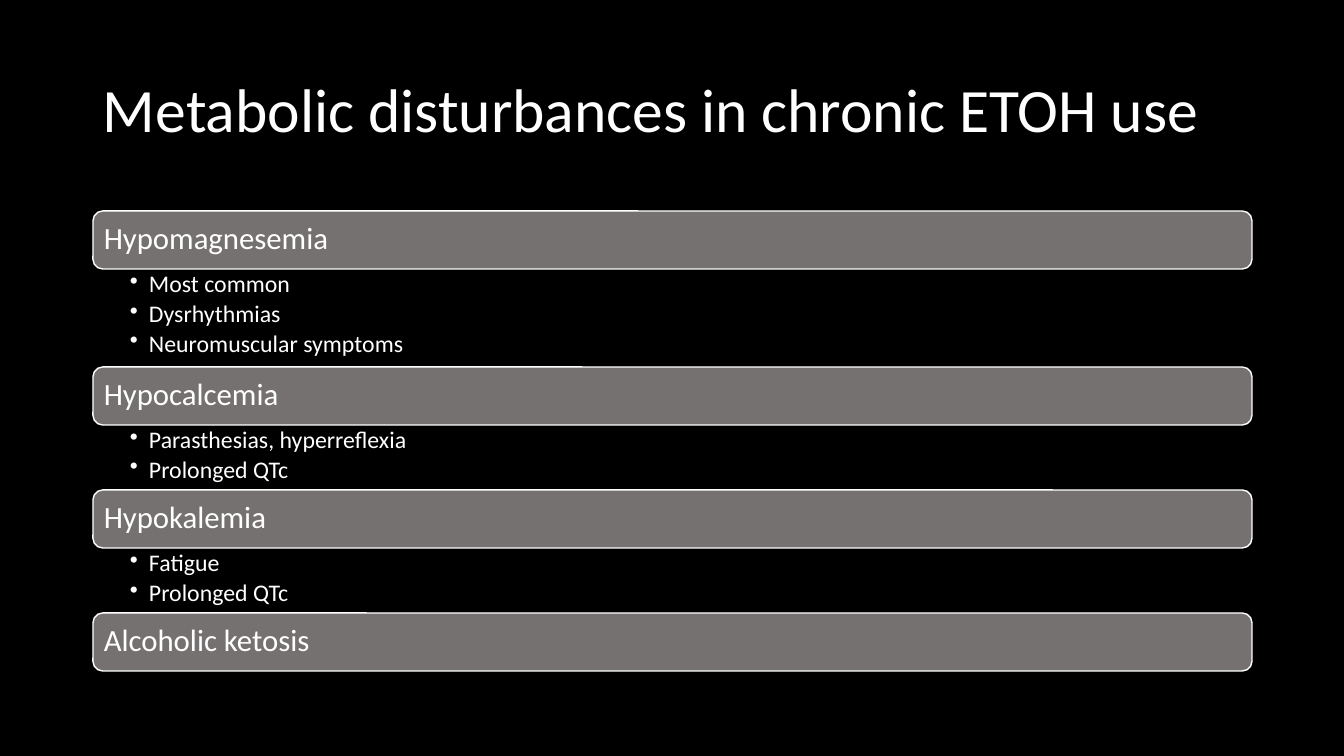
from lxml.etree import SubElement
from pptx import Presentation
from pptx.dml.color import RGBColor
from pptx.enum.shapes import MSO_SHAPE
from pptx.enum.text import MSO_ANCHOR, MSO_AUTO_SIZE, PP_ALIGN
from pptx.oxml.ns import qn
from pptx.util import Pt

TITLE = "Metabolic disturbances in chronic ETOH use"
DISTURBANCES = [
    ("Hypomagnesemia", ["Most common", "Dysrhythmias", "Neuromuscular symptoms"]),
    ("Hypocalcemia", ["Parasthesias, hyperreflexia", "Prolonged QTc"]),
    ("Hypokalemia", ["Fatigue", "Prolonged QTc"]),
    ("Alcoholic ketosis", []),
]

BLACK = RGBColor(0x00, 0x00, 0x00)
WHITE = RGBColor(0xFF, 0xFF, 0xFF)
GRAY = RGBColor(0x76, 0x71, 0x71)
FONT = "Calibri"

SLIDE_WIDTH, SLIDE_HEIGHT = 1344, 756
LEFT, WIDTH = 93, 1159
TITLE_TOP, TITLE_HEIGHT = 40, 146
BARS_TOP, BAR_HEIGHT = 211, 58
LIST_HEIGHTS = {2: 65, 3: 98}
BULLET_INDENT = 19


def px(length):
    return round(length * 12192000 / SLIDE_WIDTH)


def write(shape, lines, size, margins, anchor=MSO_ANCHOR.MIDDLE, after=0, bullet=None):
    """Fill a shape with one left-aligned paragraph per line."""
    frame = shape.text_frame
    frame.word_wrap = True
    frame.auto_size = MSO_AUTO_SIZE.NONE
    frame.vertical_anchor = anchor
    frame.margin_left, frame.margin_top, frame.margin_right, frame.margin_bottom = map(px, margins)
    for index, line in enumerate(lines):
        para = frame.add_paragraph() if index else frame.paragraphs[0]
        para.alignment = PP_ALIGN.LEFT
        para.line_spacing = 0.9
        para.space_after = Pt(after)
        span = para.add_run()
        span.text = line
        span.font.name = FONT
        span.font.size = Pt(size)
        span.font.color.rgb = WHITE
        if bullet:
            properties = para._p.get_or_add_pPr()
            properties.set("marL", str(px(BULLET_INDENT)))
            properties.set("indent", str(-px(BULLET_INDENT)))
            SubElement(properties, qn("a:buChar"), char=bullet)


def place(shape, top, height):
    shape.left, shape.top, shape.width, shape.height = map(px, (LEFT, top, WIDTH, height))


def add_bar(page, name, top):
    bar = page.shapes.add_shape(MSO_SHAPE.ROUNDED_RECTANGLE, 0, 0, 0, 0)
    place(bar, top, BAR_HEIGHT)
    bar.shadow.inherit = False
    bar.fill.solid()
    bar.fill.fore_color.rgb = GRAY
    bar.line.color.rgb = WHITE
    bar.line.width = Pt(1)
    write(bar, [name], 22, (8, 9, 8, 9))


def add_list(page, signs, top, height):
    box = page.shapes.add_textbox(0, 0, 0, 0)
    place(box, top, height)
    write(box, signs, 17, (37, 3, 17, 3), anchor=MSO_ANCHOR.TOP, after=3, bullet="•")


def main():
    deck = Presentation()
    deck.slide_width, deck.slide_height = px(SLIDE_WIDTH), px(SLIDE_HEIGHT)
    page = deck.slides.add_slide(deck.slide_layouts[5])
    page.background.fill.solid()
    page.background.fill.fore_color.rgb = BLACK

    title = page.shapes.title
    place(title, TITLE_TOP, TITLE_HEIGHT)
    write(title, [TITLE], 44, (10, 5, 10, 5))

    top = BARS_TOP
    for name, signs in DISTURBANCES:
        add_bar(page, name, top)
        top += BAR_HEIGHT
        if signs:
            height = LIST_HEIGHTS[len(signs)]
            add_list(page, signs, top, height)
            top += height

    deck.save("out.pptx")


if __name__ == "__main__":
    main()
